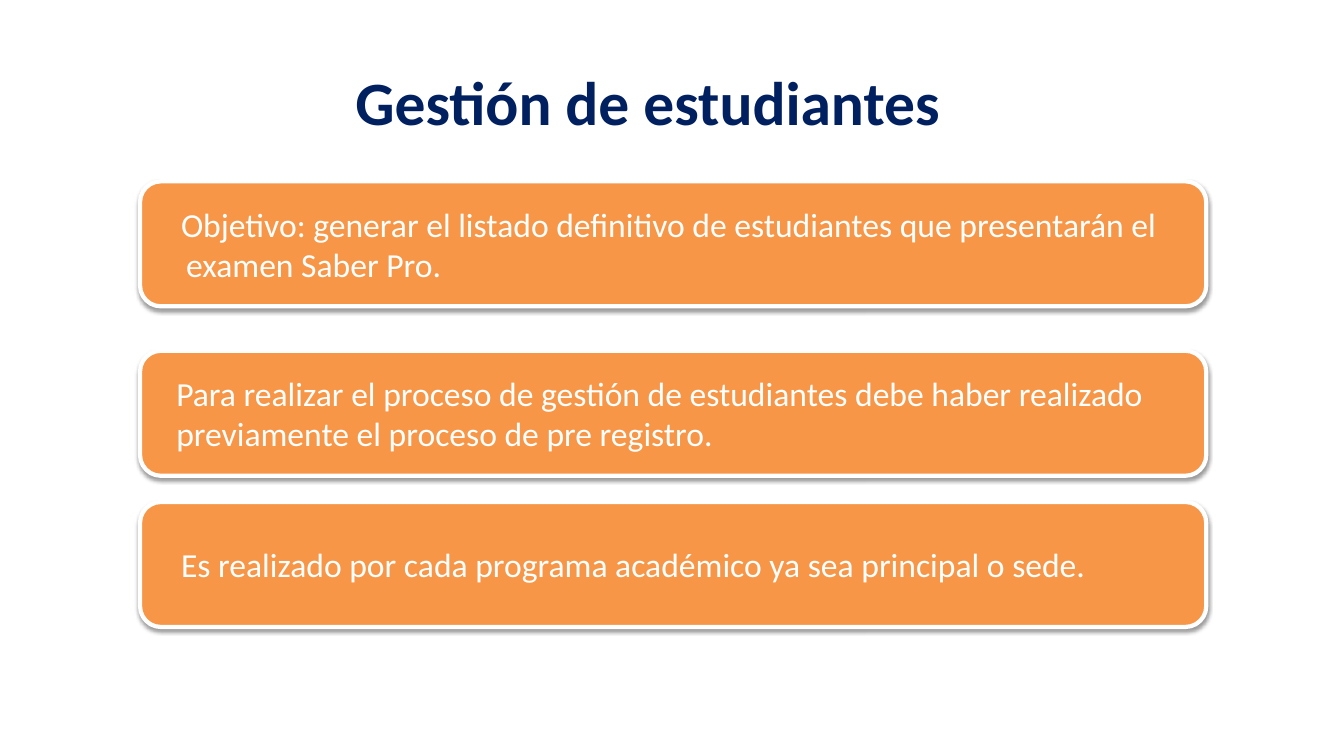
import pptx
import pptx.dml.color
import pptx.enum.shapes
import pptx.enum.text
import pptx.oxml
import pptx.oxml.ns
import pptx.util
from pptx.util import Cm

NAVY, ORANGE, WHITE = "002060", "F79646", "FFFFFF"
LEFT, WIDTH, HEIGHT = 3.53, 26.87, 3.15
CARDS = [
    (4.57, 0.76, -0.13, "Objetivo: generar el listado definitivo de estudiantes "
     "que presentarán el examen Saber Pro."),
    (8.84, 0.51, 0, "Para realizar el proceso de gestión de estudiantes debe haber "
     "realizado previamente el proceso de pre registro."),
    (12.65, 1.27, -0.64, "Es realizado por cada programa académico ya sea principal o sede."),
]


def color(code):
    """Turn a hex string into a colour."""
    return pptx.dml.color.RGBColor.from_string(code)


def write(shape, text, size=24, fill=WHITE, bold=False, align="LEFT", margin=0, indent=0):
    """Put one formatted paragraph in a shape."""
    frame = shape.text_frame
    frame.word_wrap = True
    frame.auto_size = pptx.enum.text.MSO_AUTO_SIZE.NONE
    frame.vertical_anchor = pptx.enum.text.MSO_ANCHOR.MIDDLE
    para = frame.paragraphs[0]
    para.alignment = getattr(pptx.enum.text.PP_ALIGN, align)
    props = para._p.get_or_add_pPr()
    props.set("marL", str(Cm(margin)))
    props.set("indent", str(Cm(indent)))
    run = para.add_run()
    run.text = text
    run.font.name = "Calibri"
    run.font.size = pptx.util.Pt(size)
    run.font.bold = bold
    run.font.color.rgb = color(fill)


def shade(shape):
    """Give a shape a soft shadow below it."""
    shape.shadow.inherit = False
    effects = shape._element.spPr.find(pptx.oxml.ns.qn("a:effectLst"))
    effects.append(pptx.oxml.parse_xml(
        f'<a:outerShdw {pptx.oxml.ns.nsdecls("a")} blurRad="40000" dist="20000" '
        'dir="5400000" rotWithShape="0"><a:srgbClr val="000000">'
        '<a:alpha val="38000"/></a:srgbClr></a:outerShdw>'))


def head(slide, text, left, top, width, height):
    """Place the slide title in the given box."""
    title = slide.shapes.title
    title.left, title.top = Cm(left), Cm(top)
    title.width, title.height = Cm(width), Cm(height)
    write(title, text, size=44, fill=NAVY, bold=True, align="CENTER")


def card(slide, text, left, top, width, height, **style):
    """Draw a rounded card with its text."""
    shape = slide.shapes.add_shape(
        pptx.enum.shapes.MSO_SHAPE.ROUNDED_RECTANGLE,
        Cm(left), Cm(top), Cm(width), Cm(height))
    shape.fill.solid()
    shape.fill.fore_color.rgb = color(ORANGE)
    shape.line.color.rgb = color(WHITE)
    shape.line.width = pptx.util.Pt(3)
    shade(shape)
    write(shape, text, **style)


def main():
    """Build and save the slide."""
    deck = pptx.Presentation()
    deck.slide_width, deck.slide_height = Cm(33.87), Cm(19.05)
    slide = deck.slides.add_slide(deck.slide_layouts[5])
    head(slide, "Gestión de estudiantes", 1.09, 0.94, 30.48, 3.18)
    for top, margin, indent, text in CARDS:
        card(slide, text, LEFT, top, WIDTH, HEIGHT, margin=margin, indent=indent)
    deck.save("out.pptx")


if __name__ == "__main__":
    main()
